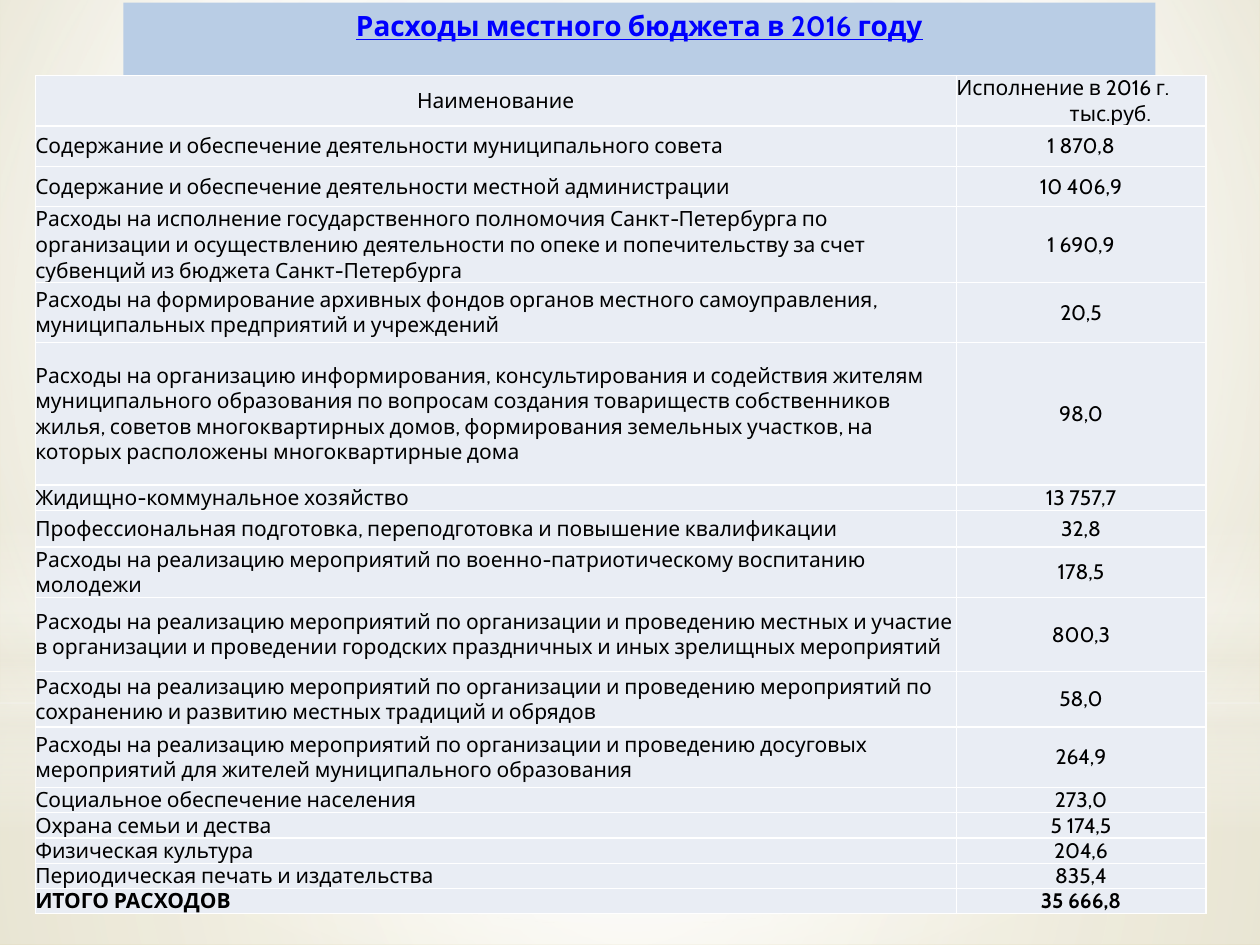
from dataclasses import dataclass

from lxml import etree
from pptx import Presentation
from pptx.dml.color import RGBColor
from pptx.enum.shapes import MSO_SHAPE
from pptx.enum.text import MSO_ANCHOR, MSO_AUTO_SIZE, PP_ALIGN
from pptx.oxml.ns import qn
from pptx.util import Inches, Pt

RECTANGLE, OVAL = MSO_SHAPE.RECTANGLE, MSO_SHAPE.OVAL
LEFT, CENTER = PP_ALIGN.LEFT, PP_ALIGN.CENTER
MIDDLE = MSO_ANCHOR.MIDDLE
TITLE_ONLY = 5
CENTERED_FOCUS = (50, 50, 50, 50)


@dataclass(frozen=True)
class Theme:
    font: str = "Cabin"
    title_size: int = 16
    body_size: int = 12
    title_color: str = "0000FF"
    title_fill: str = "B9CDE5"
    text: str = "000000"
    cell_fill: str = "E9EDF4"
    border: str = "FFFFFF"
    white: str = "FFFFFF"
    cream: str = "EEECE1"
    sand: str = "E7E4D4"
    khaki: str = "D5CC9F"


THEME = Theme()

TITLE = "Расходы местного бюджета в 2016 году"
HEADER = ("Наименование", "Исполнение в 2016 г.\nтыс.руб.")
# Row height, item, amount
EXPENSES = [
    (0.32, "Содержание и обеспечение деятельности муниципального совета", "1 870,8"),
    (0.32, "Содержание и обеспечение деятельности местной администрации", "10 406,9"),
    (0.59, "Расходы на исполнение государственного полномочия Санкт-Петербурга по "
           "организации и осуществлению деятельности по опеке и попечительству за счет "
           "субвенций из бюджета Санкт-Петербурга", "1 690,9"),
    (0.48, "Расходы на формирование архивных фондов органов местного самоуправления, "
           "муниципальных предприятий и учреждений", "20,5"),
    (1.13, "Расходы на организацию информирования, консультирования и содействия жителям "
           "муниципального образования по вопросам создания товариществ собственников "
           "жилья, советов многоквартирных домов, формирования земельных участков, на "
           "которых расположены многоквартирные дома", "98,0"),
    (0.2, "Жидищно-коммунальное хозяйство", "13 757,7"),
    (0.29, "Профессиональная подготовка, переподготовка и повышение квалификации", "32,8"),
    (0.39, "Расходы на реализацию мероприятий по военно-патриотическому воспитанию "
           "молодежи", "178,5"),
    (0.59, "Расходы на реализацию мероприятий по организации и проведению местных и участие "
           "в организации и проведении городских праздничных и иных зрелищных мероприятий",
     "800,3"),
    (0.44, "Расходы на реализацию мероприятий по организации и проведению мероприятий по "
           "сохранению и развитию местных традиций и обрядов", "58,0"),
    (0.48, "Расходы на реализацию мероприятий по организации и проведению досуговых "
           "мероприятий для жителей муниципального образования", "264,9"),
    (0.2, "Социальное обеспечение населения", "273,0"),
    (0.2, "Охрана семьи и дества", "5 174,5"),
    (0.2, "Физическая культура", "204,6"),
    (0.2, "Периодическая печать и издательства", "835,4"),
    (0.2, "ИТОГО РАСХОДОВ", "35 666,8"),
]


class SlideBuilder:
    def __init__(self, slide, theme):
        self.slide = slide
        self.theme = theme

    def gradient(self, owner, stops, focus=None, angle=90):
        """Fill with (position, colour, opacity) stops, radial when focus is given."""
        owner.fill.gradient()
        element = self.slide.element if owner is self.slide.background else owner.element
        gradient = element.find(".//" + qn("a:gradFill"))
        gradient.clear()
        stop_list = etree.SubElement(gradient, qn("a:gsLst"))
        for position, color, opacity in stops:
            stop = etree.SubElement(stop_list, qn("a:gs"), pos=str(position * 1000))
            color_element = etree.SubElement(stop, qn("a:srgbClr"), val=color)
            if opacity < 100:
                etree.SubElement(color_element, qn("a:alpha"), val=str(opacity * 1000))
        if focus is None:
            etree.SubElement(gradient, qn("a:lin"), ang=str(angle * 60000), scaled="0")
            return
        radial = etree.SubElement(gradient, qn("a:path"))
        radial.set("path", "circle")
        sides = {side: str(value * 1000) for side, value in zip("ltrb", focus)}
        etree.SubElement(radial, qn("a:fillToRect"), **sides)

    def glow(self, kind, top, height, stops, focus=None):
        """Full-width translucent band of the backdrop."""
        shape = self.slide.shapes.add_shape(
            kind, 0, Inches(top), Inches(10), Inches(height))
        shape.shadow.inherit = False
        shape.line.fill.background()
        self.gradient(shape, stops, focus)

    def format_text(self, paragraph, size, color, alignment, bold=False, underline=False):
        paragraph.alignment = alignment
        for run in paragraph.runs:
            font = run.font
            font.name = self.theme.font
            font.size = Pt(size)
            font.bold = bold
            font.underline = underline
            font.color.rgb = RGBColor.from_string(color)

    def title(self, text, left, top, width, height):
        shape = self.slide.shapes.title
        shape.left, shape.top = Inches(left), Inches(top)
        shape.width, shape.height = Inches(width), Inches(height)
        shape.fill.solid()
        shape.fill.fore_color.rgb = RGBColor.from_string(self.theme.title_fill)
        frame = shape.text_frame
        frame.text = text
        frame.word_wrap = True
        frame.auto_size = MSO_AUTO_SIZE.SHAPE_TO_FIT_TEXT
        frame.vertical_anchor = MSO_ANCHOR.TOP
        self.format_text(frame.paragraphs[0], self.theme.title_size,
                         self.theme.title_color, CENTER, bold=True, underline=True)
        # Bring the title in front of the backdrop
        self.slide.shapes.element.append(shape.element)

    def cell_borders(self, cell):
        properties = cell._tc.get_or_add_tcPr()
        for index, side in enumerate(("lnL", "lnR", "lnT", "lnB")):
            line = etree.Element(qn(f"a:{side}"), w=str(Pt(1)))
            fill = etree.SubElement(line, qn("a:solidFill"))
            etree.SubElement(fill, qn("a:srgbClr"), val=self.theme.border)
            properties.insert(index, line)

    def cell(self, cell, text, alignment, bold=False):
        cell.margin_left = cell.margin_right = cell.margin_top = cell.margin_bottom = 0
        cell.vertical_anchor = MIDDLE
        cell.fill.solid()
        cell.fill.fore_color.rgb = RGBColor.from_string(self.theme.cell_fill)
        self.cell_borders(cell)
        cell.text_frame.text = text
        for paragraph in cell.text_frame.paragraphs:
            self.format_text(paragraph, self.theme.body_size, self.theme.text,
                             alignment, bold)

    def table(self, header, header_height, rows, left, top, column_widths):
        heights = [header_height] + [row[0] for row in rows]
        frame = self.slide.shapes.add_table(
            len(heights), len(column_widths), Inches(left), Inches(top),
            Inches(sum(column_widths)), Inches(sum(heights)))
        table = frame.table
        table.first_row = table.horz_banding = False
        for column, width in zip(table.columns, column_widths):
            column.width = Inches(width)
        for row, height in zip(table.rows, heights):
            row.height = Inches(height)

        # Header: the unit sits indented under the amount heading
        self.cell(table.cell(0, 0), header[0], CENTER)
        amount_heading = table.cell(0, 1)
        self.cell(amount_heading, header[1], LEFT)
        unit = amount_heading.text_frame.paragraphs[1]
        unit._p.get_or_add_pPr().set("marL", str(Inches(0.9)))

        # Items and amounts, with a bold total at the end
        for index, (_, item, amount) in enumerate(rows, start=1):
            is_total = index == len(rows)
            self.cell(table.cell(index, 0), item, LEFT, is_total)
            self.cell(table.cell(index, 1), amount, CENTER, is_total)


def main():
    presentation = Presentation()
    presentation.slide_width, presentation.slide_height = Inches(10), Inches(7.5)
    slide = presentation.slides.add_slide(presentation.slide_layouts[TITLE_ONLY])
    builder = SlideBuilder(slide, THEME)
    white, cream = THEME.white, THEME.cream

    # Backdrop
    builder.gradient(slide.background,
                     [(0, THEME.sand, 100), (60, white, 100), (100, THEME.khaki, 100)],
                     focus=(20, 10, 20, 60))
    builder.glow(RECTANGLE, 5.58, 1.92,
                 [(0, white, 91), (37, white, 76), (100, cream, 79)], CENTERED_FOCUS)
    builder.glow(RECTANGLE, 0, 5.58,
                 [(0, white, 89), (48, white, 62), (100, cream, 79)], CENTERED_FOCUS)
    builder.glow(RECTANGLE, 4.12, 2.5,
                 [(0, white, 0), (29, white, 30), (45, cream, 40),
                  (55, white, 26), (65, cream, 60), (100, white, 0)])
    builder.glow(OVAL, 1.75, 5.58, [(0, white, 100), (56, white, 0)], CENTERED_FOCUS)

    # Title and budget table
    builder.title(TITLE, 0.98, 0.02, 8.19, 0.37)
    builder.table(HEADER, 0.39, EXPENSES, 0.28, 0.6, (7.31, 1.98))

    presentation.save("out.pptx")


if __name__ == "__main__":
    main()
